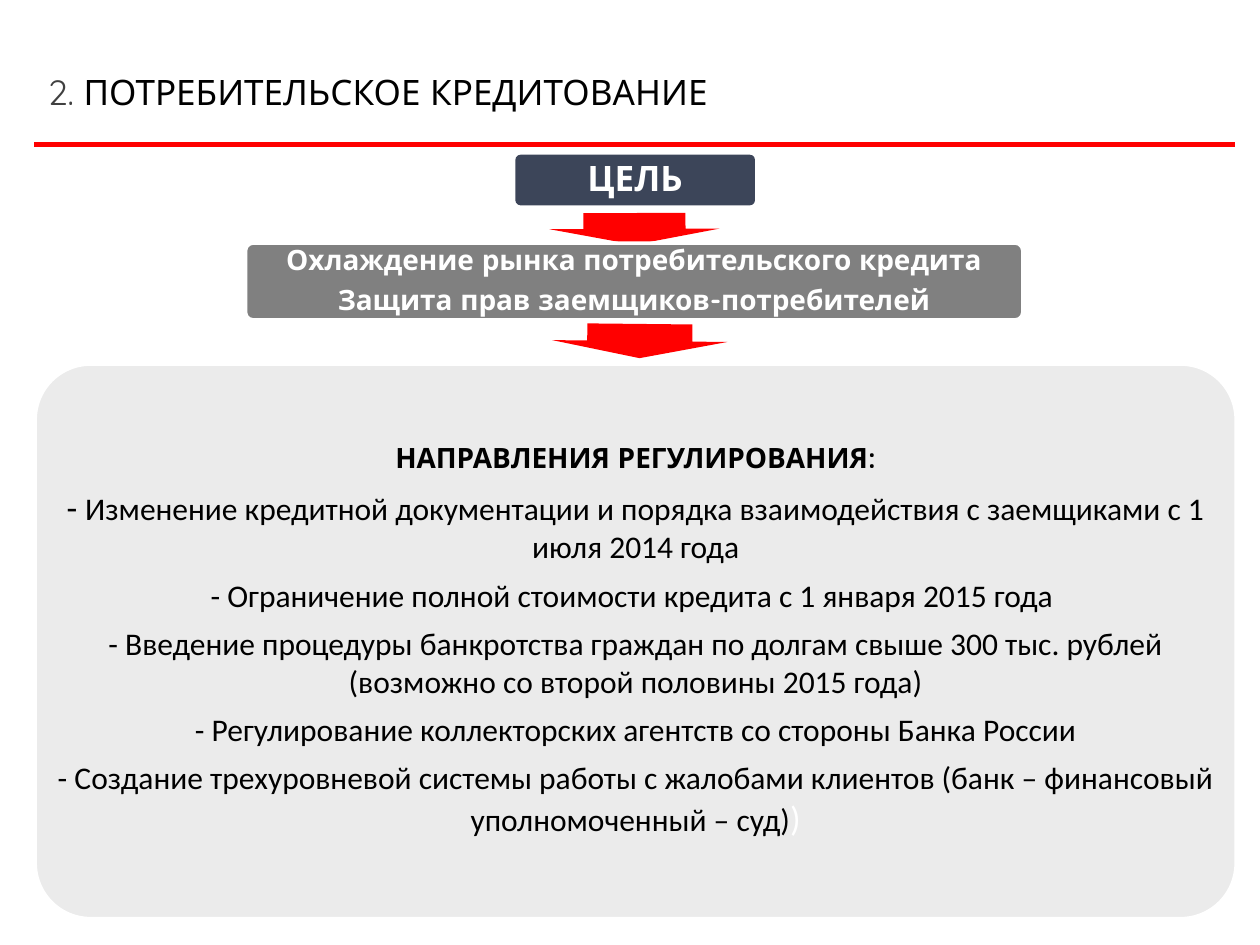
from lxml.etree import SubElement
from pptx import Presentation
from pptx.dml.color import RGBColor
from pptx.enum.shapes import MSO_CONNECTOR, MSO_SHAPE
from pptx.enum.text import MSO_ANCHOR, PP_ALIGN
from pptx.oxml.ns import qn
from pptx.util import Cm, Pt


def colour(value):
    return RGBColor.from_string(value)


def add_span(para, text, size, font, shade, bold=False):
    span = para.add_run()
    span.text = text
    span.font.size = Pt(size)
    span.font.name = font
    span.font.bold = bold
    span.font.color.rgb = colour(shade)


deck = Presentation()
deck.slide_width = Cm(25.4)
deck.slide_height = Cm(19.05)
page = deck.slides.add_slide(deck.slide_layouts[5])

rule = page.shapes.add_connector(
    MSO_CONNECTOR.STRAIGHT, Cm(0.69), Cm(2.92), Cm(24.89), Cm(2.92))
rule.line.color.rgb = colour("FF0000")
rule.line.width = Pt(2.75)
SubElement(rule._element.spPr, qn("a:effectLst"))

title = page.shapes.title
title.left, title.top, title.width, title.height = Cm(0.71), Cm(0.76), Cm(23.42), Cm(2.16)
title.text_frame.vertical_anchor = MSO_ANCHOR.MIDDLE
para = title.text_frame.paragraphs[0]
para.alignment = PP_ALIGN.LEFT
add_span(para, "2. ", 20, "Quicksand", "404040")
add_span(para, "ПОТРЕБИТЕЛЬСКОЕ КРЕДИТОВАНИЕ", 20, "Quicksand", "000000")

arrows = [
    (12.55, 5.11, 0.69, 3.53, 90.6),
    (12.47, 2.9, 0.64, 3.43, 89.8),
]
for left, top, width, height, angle in arrows:
    arrow = page.shapes.add_shape(
        MSO_SHAPE.RIGHT_ARROW, Cm(left), Cm(top), Cm(width), Cm(height))
    arrow.adjustments[0] = 0.6
    arrow.adjustments[1] = 0.5
    arrow.rotation = angle
    arrow.shadow.inherit = False
    arrow.fill.solid()
    arrow.fill.fore_color.rgb = colour("FF0000")
    arrow.line.fill.background()

goal = [[("ЦЕЛЬ", 20, "Quicksand", "FFFFFF", True)]]
aims = [
    [(text, 16, "Quicksand", "FFFFFF", True)]
    for text in ("Охлаждение рынка потребительского кредита",
                 "Защита прав заемщиков-потребителей")
]
measures = [
    "Изменение кредитной документации и порядка взаимодействия с заемщиками с 1 июля 2014 года",
    "- Ограничение полной стоимости кредита с 1 января 2015 года ",
    "- Введение процедуры банкротства граждан по долгам свыше 300 тыс. рублей "
    "(возможно со второй половины 2015 года)",
    "- Регулирование коллекторских агентств со стороны Банка России",
    "- Создание трехуровневой системы работы с жалобами клиентов "
    "(банк – финансовый уполномоченный – суд)",
]
directions = [[("НАПРАВЛЕНИЯ РЕГУЛИРОВАНИЯ:", 16, "Quicksand", "000000", True)]]
directions += [[(text, 18, "Calibri", "000000")] for text in measures]
directions[1].insert(0, ("- ", 20, "Calibri", "000000"))
directions[-1].append((")", 20, "Calibri", "FFFFFF"))

panels = [
    (10.39, 3.12, 4.83, 1.02, "3C4559", False, goal),
    (4.95, 4.9, 15.67, 1.55, "808080", True, aims),
    (0.71, 7.34, 24.21, 11.18, "D9D9D9", True, directions),
]
for left, top, width, height, shade, outlined, paragraphs in panels:
    place = Cm(left), Cm(top), Cm(width), Cm(height)
    panel = page.shapes.add_shape(MSO_SHAPE.ROUNDED_RECTANGLE, *place)
    panel.adjustments[0] = 0.1
    panel.shadow.inherit = False
    panel.fill.solid()
    panel.fill.fore_color.rgb = colour(shade)
    if paragraphs is directions:
        tint = panel._element.spPr.find(qn("a:solidFill"))[0]
        SubElement(tint, qn("a:alpha"), val="50000")
    if outlined:
        panel.line.color.rgb = colour("FFFFFF")
        panel.line.width = Pt(2)
    else:
        panel.line.fill.background()

    box = page.shapes.add_textbox(*place)
    frame = box.text_frame
    frame.word_wrap = True
    frame.vertical_anchor = MSO_ANCHOR.MIDDLE
    frame.margin_left = frame.margin_right = Cm(0.18)
    frame.margin_top = frame.margin_bottom = Cm(0.18)
    for index, spans in enumerate(paragraphs):
        para = frame.add_paragraph() if index else frame.paragraphs[0]
        para.alignment = PP_ALIGN.CENTER
        para.space_after = Pt(6)
        if spans[0][2] == "Quicksand":
            para.line_spacing = 0.9
        for span in spans:
            add_span(para, *span)

deck.save("out.pptx")
